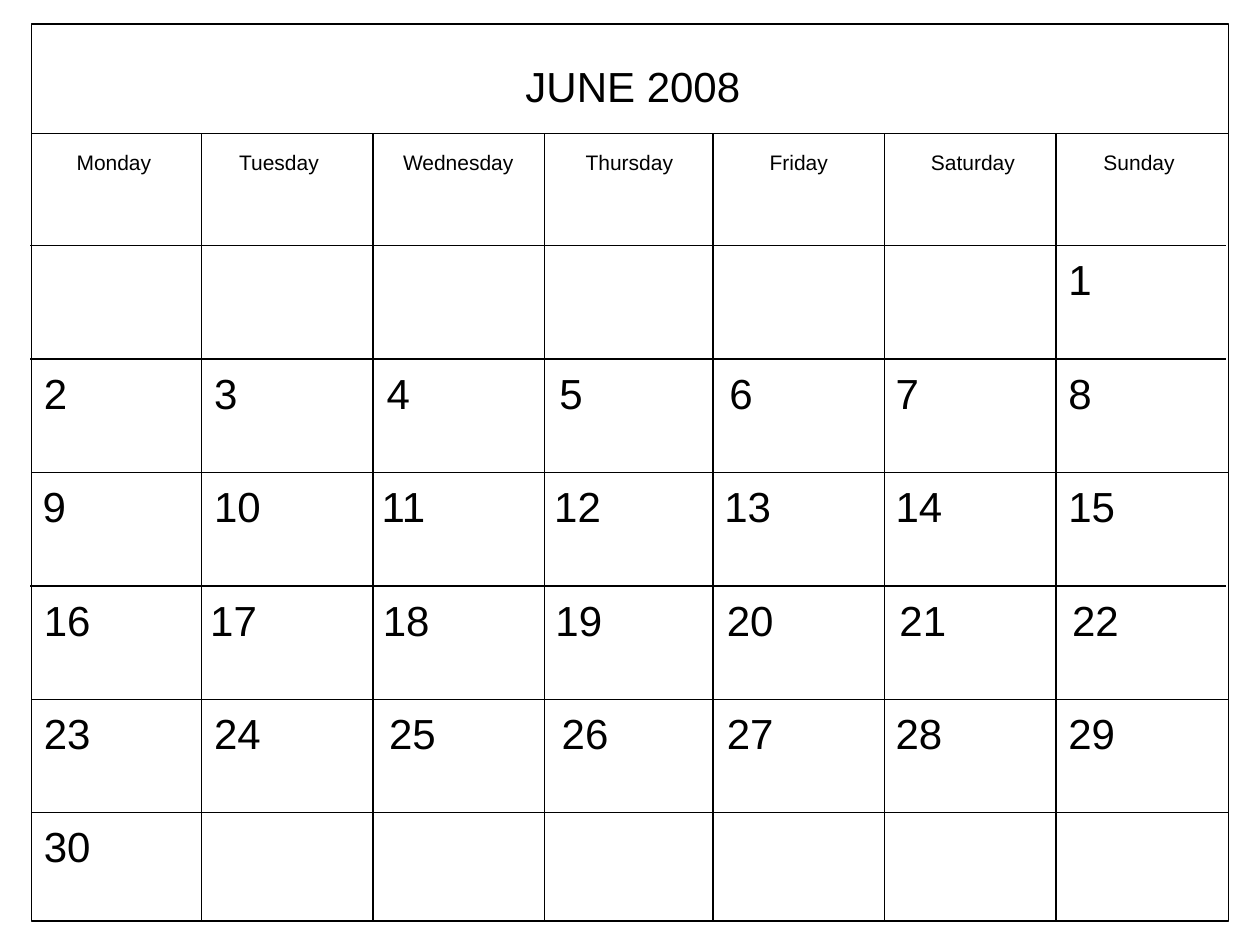
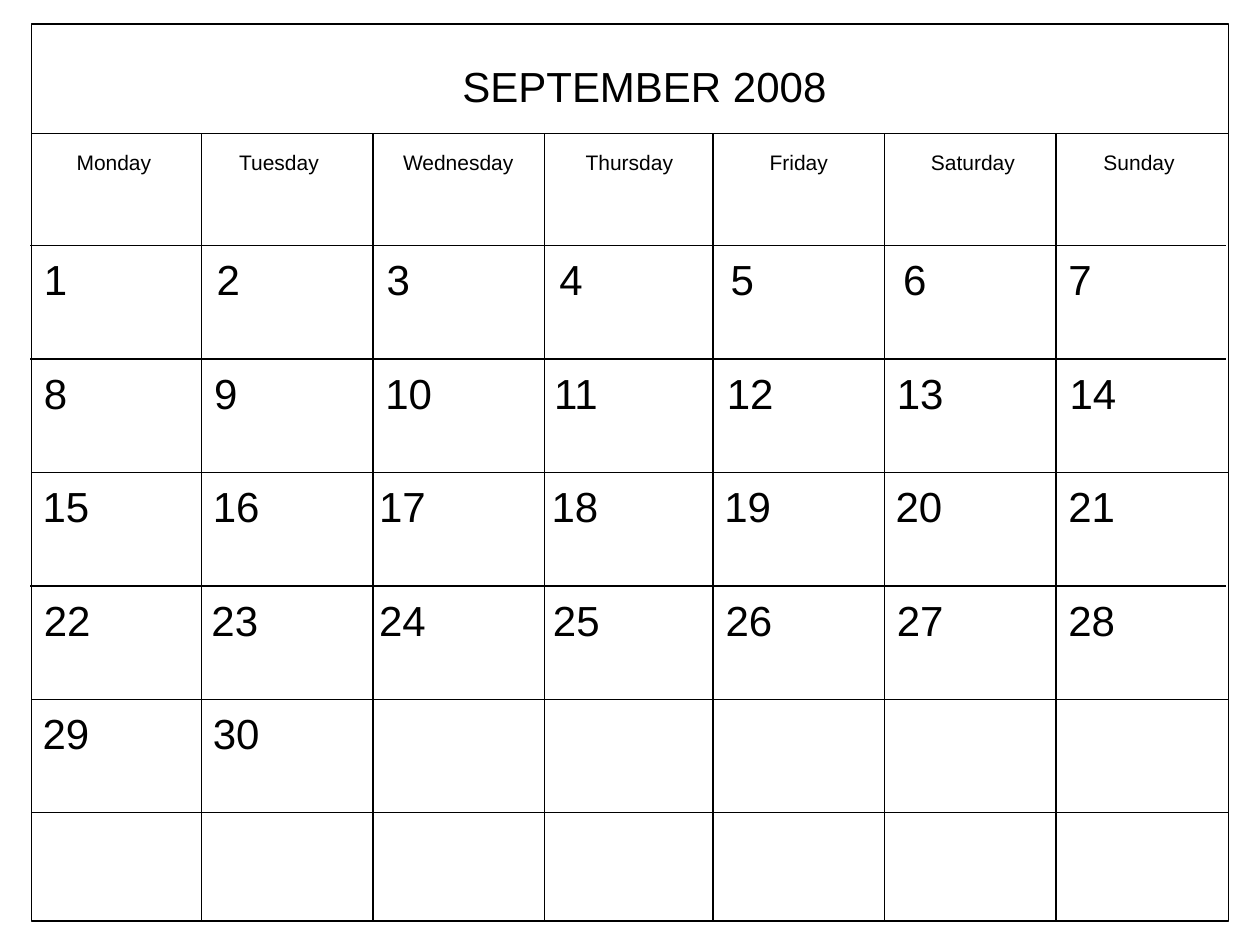
from typing import NamedTuple

from lxml import etree
from pptx import Presentation
from pptx import util as u
from pptx.dml.color import RGBColor
from pptx.enum import shapes, text
from pptx.oxml import ns

PX = u.Inches(1) // 100
INK = "000000"
FONT = "Arial"

LEFT, TOP, WIDE, HIGH = 25, 19, 950, 712
HEAD = 106
FIRST, STEP = 195, 90
COLS = (160, 296, 432, 566, 702, 838)
INSET_ROWS = (0, 1, 3)  # rules that sit slightly left of the frame


class Box(NamedTuple):
    left: int
    top: int
    wide: int
    high: int


class Day(NamedTuple):
    name: str
    left: int
    wide: int


class Month(NamedTuple):
    name: str
    left: int
    wide: int
    weeks: tuple[tuple[int, ...], ...]  # left edge of each date, week by week


DAYS = (
    Day("Monday", 51, 80),
    Day("Tuesday", 180, 84),
    Day("Wednesday", 310, 108),
    Day("Thursday", 455, 90),
    Day("Friday", 601, 66),
    Day("Saturday", 729, 87),
    Day("Sunday", 866, 77),
)

MONTHS = (
    Month("JUNE 2008", 407, 191, (
        (838,),
        (25, 160, 297, 434, 569, 701, 838),
        (24, 160, 293, 430, 565, 701, 838),
        (25, 157, 294, 431, 567, 704, 841),
        (25, 160, 299, 436, 567, 701, 838),
        (25,),
    )),
    Month("SEPTEMBER 2008", 357, 309, (
        (25, 162, 297, 434, 570, 707, 838),
        (25, 160, 296, 430, 567, 702, 839),
        (24, 159, 291, 428, 565, 701, 838),
        (25, 158, 291, 429, 566, 702, 838),
        (24, 159),
    )),
)


def color(code: str) -> RGBColor:
    return RGBColor.from_string(code)


def scale(*sizes: int) -> list[u.Emu]:
    return [u.Emu(size * PX) for size in sizes]


def pen(line) -> None:
    line.color.rgb = color(INK)
    line.width = u.Pt(0.75)


def rule(group, x1: int, y1: int, x2: int, y2: int) -> None:
    line = group.shapes.add_connector(
        shapes.MSO_CONNECTOR.STRAIGHT, *scale(x1, y1, x2, y2))
    pen(line.line)
    etree.SubElement(line._element.spPr, ns.qn("a:effectLst"))


def grid(slide) -> None:
    group = slide.shapes.add_group_shape()
    rule(group, LEFT, HEAD, LEFT + WIDE, HEAD)
    for row in range(6):
        y = FIRST + row * STEP
        x1, x2 = (24, 973) if row in INSET_ROWS else (LEFT, LEFT + WIDE)
        rule(group, x1, y, x2, y)
    for x in COLS:
        rule(group, x, HEAD, x, TOP + HIGH)
    frame = group.shapes.add_shape(
        shapes.MSO_SHAPE.RECTANGLE, *scale(LEFT, TOP, WIDE, HIGH))
    frame.shadow.inherit = False
    frame.fill.background()
    pen(frame.line)


def write(shape, words: str, size: int, grow: bool = True) -> None:
    """Fill a shape with one unwrapped line; a growing shape fits its text."""
    body = shape.text_frame
    body.word_wrap = False
    fit, anchor = text.MSO_AUTO_SIZE, text.MSO_ANCHOR
    body.auto_size = fit.SHAPE_TO_FIT_TEXT if grow else fit.NONE
    body.vertical_anchor = anchor.TOP if grow else anchor.MIDDLE
    para = body.paragraphs[0]
    para.alignment = text.PP_ALIGN.LEFT
    run = para.add_run()
    run.text = words
    run.font.name = FONT
    run.font.size = u.Pt(size)
    run.font.color.rgb = color(INK)


def label(slide, box: Box, words: str, size: int, grow: bool = True) -> None:
    write(slide.shapes.add_textbox(*scale(*box)), words, size, grow)


def head(slide, month: Month) -> None:
    title = slide.shapes.title
    title.left, title.top, title.width, title.height = scale(
        month.left, 43, month.wide, 50)
    write(title, month.name, 24)


def dates(slide, month: Month) -> None:
    date = 1
    for row, week in enumerate(month.weeks):
        for left in week:
            box = Box(left, FIRST + row * STEP, 75, 53)
            label(slide, box, str(date), 24, grow=False)
            date += 1


def page(deck, month: Month) -> None:
    slide = deck.slides.add_slide(deck.slide_layouts.get_by_name("Title Only"))
    grid(slide)
    head(slide, month)
    for day in DAYS:
        label(slide, Box(day.left, 114, day.wide, 30), day.name, 12)
    dates(slide, month)


def main() -> None:
    deck = Presentation()
    deck.slide_width, deck.slide_height = scale(1000, 750)
    for month in MONTHS:
        page(deck, month)
    deck.save("out.pptx")


if __name__ == "__main__":
    main()
